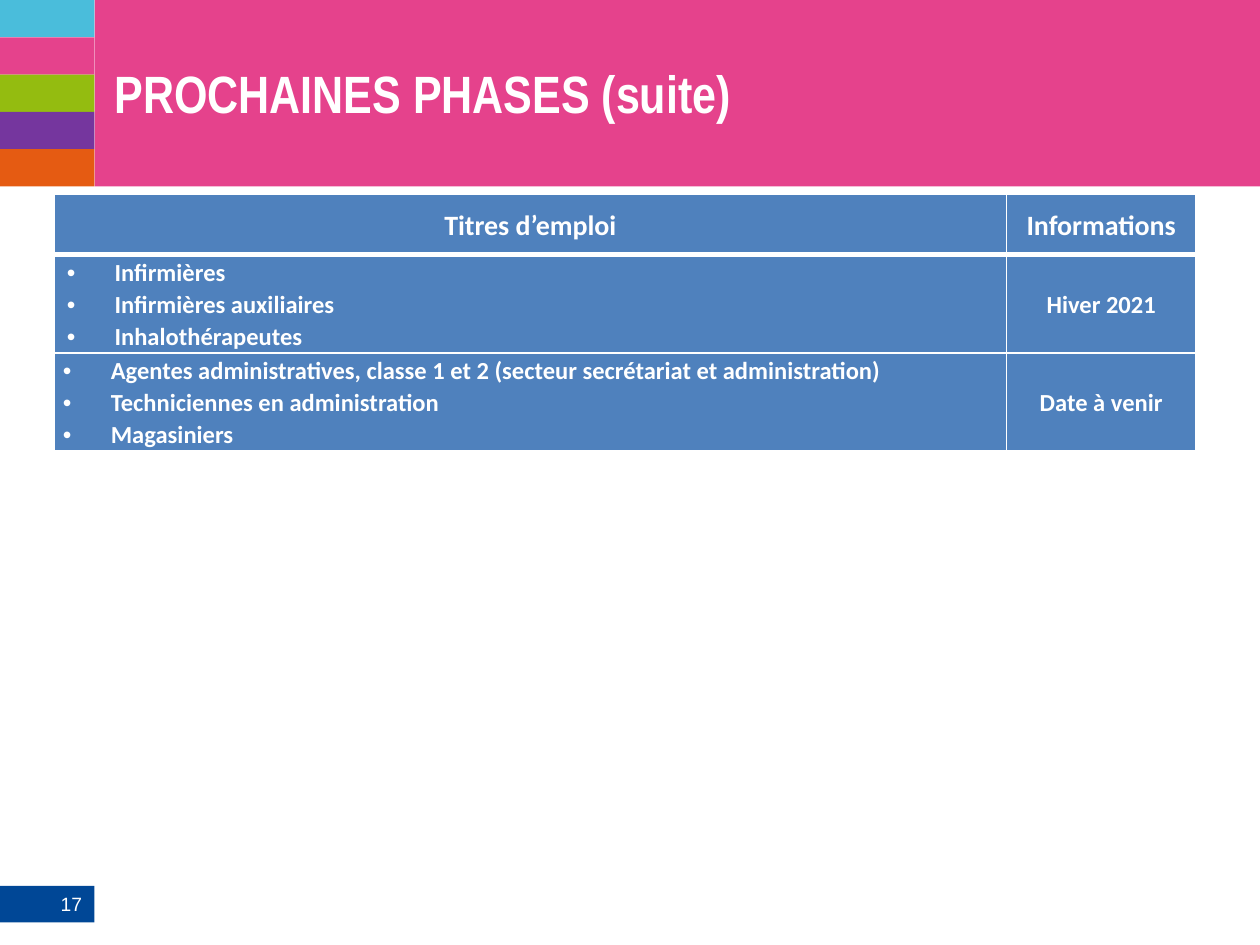
from dataclasses import dataclass

from lxml.etree import SubElement
from pptx import Presentation
from pptx.dml.color import RGBColor
from pptx.enum.shapes import MSO_SHAPE
from pptx.enum.text import MSO_ANCHOR, PP_ALIGN
from pptx.oxml.ns import qn
from pptx.util import Inches, Pt


@dataclass(frozen=True)
class Theme:
    white: str = "FFFFFF"
    pink: str = "E5428C"
    navy: str = "004796"
    table_blue: str = "4F81BD"
    stripes: tuple = ("4ABDDB", "E5428C", "94BC10", "75369E", "E55B12")
    title_font: str = "Arial Narrow"
    number_font: str = "Arial"
    table_font: str = "Calibri"
    title_size: int = 30
    header_size: int = 16
    body_size: int = 14
    number_size: int = 11


THEME = Theme()
TITLE = "PROCHAINES PHASES (suite)"
PAGE_NUMBER = "17"
HEADERS = ["Titres d’emploi", "Informations"]
PHASES = [
    (["Infirmières", "Infirmières auxiliaires", "Inhalothérapeutes"], "Hiver 2021"),
    (["Agentes administratives, classe 1 et 2 (secteur secrétariat et administration)",
      "Techniciennes en administration", "Magasiniers"], "Date à venir"),
]

SLIDE_WIDTH, SLIDE_HEIGHT = 10, 7.5
SIDEBAR_WIDTH = 0.75
BANNER_HEIGHT = 1.48
TABLE_LEFT, TABLE_TOP = 0.43, 1.54
COLUMN_WIDTHS = [7.56, 1.5]
ROW_HEIGHTS = [0.48, 0.78, 0.78]
ROW_MARGINS = [0.07, 0.1, 0.07]
BULLET_INDENT = 0.38
THIN_LINE, HEADER_LINE = 1, 3


def write_text(frame, lines, *, font, size, bold=True, align=PP_ALIGN.LEFT,
               line_spacing=None, spacing=None, bullet=None):
    for index, line in enumerate(lines):
        paragraph = frame.paragraphs[0] if index == 0 else frame.add_paragraph()
        paragraph.alignment = align
        if bullet:
            properties = paragraph._p.get_or_add_pPr()
            properties.set("marL", str(Inches(BULLET_INDENT)))
            properties.set("indent", str(-Inches(BULLET_INDENT)))
            SubElement(properties, qn("a:buFont"), typeface="Arial")
            SubElement(properties, qn("a:buChar"), char=bullet)
        if line_spacing:
            paragraph.line_spacing = line_spacing
        if spacing:
            paragraph.space_after = Pt(spacing)
        run = paragraph.add_run()
        run.text = line
        run.font.name, run.font.size, run.font.bold = font, Pt(size), bold
        run.font.color.rgb = RGBColor.from_string(THEME.white)


def add_block(slide, left, top, width, height, color):
    shape = slide.shapes.add_shape(
        MSO_SHAPE.RECTANGLE, Inches(left), Inches(top), Inches(width), Inches(height))
    shape.shadow.inherit = False
    shape.fill.solid()
    shape.fill.fore_color.rgb = RGBColor.from_string(color)
    shape.line.fill.background()
    return shape


def set_borders(cell, top, bottom):
    properties = cell._tc.get_or_add_tcPr()
    for side, width in (("L", THIN_LINE), ("R", THIN_LINE), ("T", top), ("B", bottom)):
        line = SubElement(properties, qn(f"a:ln{side}"), w=str(Pt(width)))
        fill = SubElement(line, qn("a:solidFill"))
        SubElement(fill, qn("a:srgbClr"), val=THEME.white)


def add_decoration(slide):
    add_block(slide, SIDEBAR_WIDTH, 0, SLIDE_WIDTH - SIDEBAR_WIDTH, BANNER_HEIGHT, THEME.pink)
    stripe_height = BANNER_HEIGHT / len(THEME.stripes)
    for index, color in enumerate(THEME.stripes):
        add_block(slide, 0, index * stripe_height, SIDEBAR_WIDTH, stripe_height, color)
    number = add_block(slide, 0, 7.03, SIDEBAR_WIDTH, 0.29, THEME.navy).text_frame
    number.vertical_anchor = MSO_ANCHOR.MIDDLE
    write_text(number, [PAGE_NUMBER], font=THEME.number_font, size=THEME.number_size,
               bold=False, align=PP_ALIGN.RIGHT)


def fill_title(slide):
    title = slide.shapes.title
    title.left, title.top = Inches(0.91), Inches(0)
    title.width, title.height = Inches(8.82), Inches(1.47)
    frame = title.text_frame
    frame.margin_left = frame.margin_right = frame.margin_top = frame.margin_bottom = 0
    frame.vertical_anchor = MSO_ANCHOR.MIDDLE
    write_text(frame, [TITLE], font=THEME.title_font, size=THEME.title_size)
    slide.shapes._spTree.append(title._element)  # bring in front of the banner


def add_phase_table(slide):
    rows = [([HEADERS[0]], HEADERS[1]), *PHASES]
    table = slide.shapes.add_table(
        len(rows), len(COLUMN_WIDTHS), Inches(TABLE_LEFT), Inches(TABLE_TOP),
        Inches(sum(COLUMN_WIDTHS)), Inches(sum(ROW_HEIGHTS))).table
    for column, width in zip(table.columns, COLUMN_WIDTHS):
        column.width = Inches(width)
    for row_index, (jobs, information) in enumerate(rows):
        table.rows[row_index].height = Inches(ROW_HEIGHTS[row_index])
        is_header = row_index == 0
        for column_index, lines in enumerate((jobs, [information])):
            cell = table.cell(row_index, column_index)
            cell.margin_left = cell.margin_right = Inches(ROW_MARGINS[row_index])
            cell.margin_top = cell.margin_bottom = 0
            cell.vertical_anchor = MSO_ANCHOR.MIDDLE
            set_borders(cell, top=HEADER_LINE if row_index == 1 else THIN_LINE,
                        bottom=HEADER_LINE if is_header else THIN_LINE)
            cell.fill.solid()
            cell.fill.fore_color.rgb = RGBColor.from_string(THEME.table_blue)
            is_list = not is_header and column_index == 0
            write_text(cell.text_frame, lines, font=THEME.table_font,
                       size=THEME.header_size if is_header else THEME.body_size,
                       align=PP_ALIGN.LEFT if is_list else PP_ALIGN.CENTER,
                       line_spacing=1.07, bullet="•" if is_list else None,
                       spacing=None if is_header or is_list else 3)


def main():
    presentation = Presentation()
    presentation.slide_width = Inches(SLIDE_WIDTH)
    presentation.slide_height = Inches(SLIDE_HEIGHT)
    slide = presentation.slides.add_slide(presentation.slide_layouts[5])
    add_decoration(slide)
    fill_title(slide)
    add_phase_table(slide)
    presentation.save("out.pptx")


if __name__ == "__main__":
    main()
